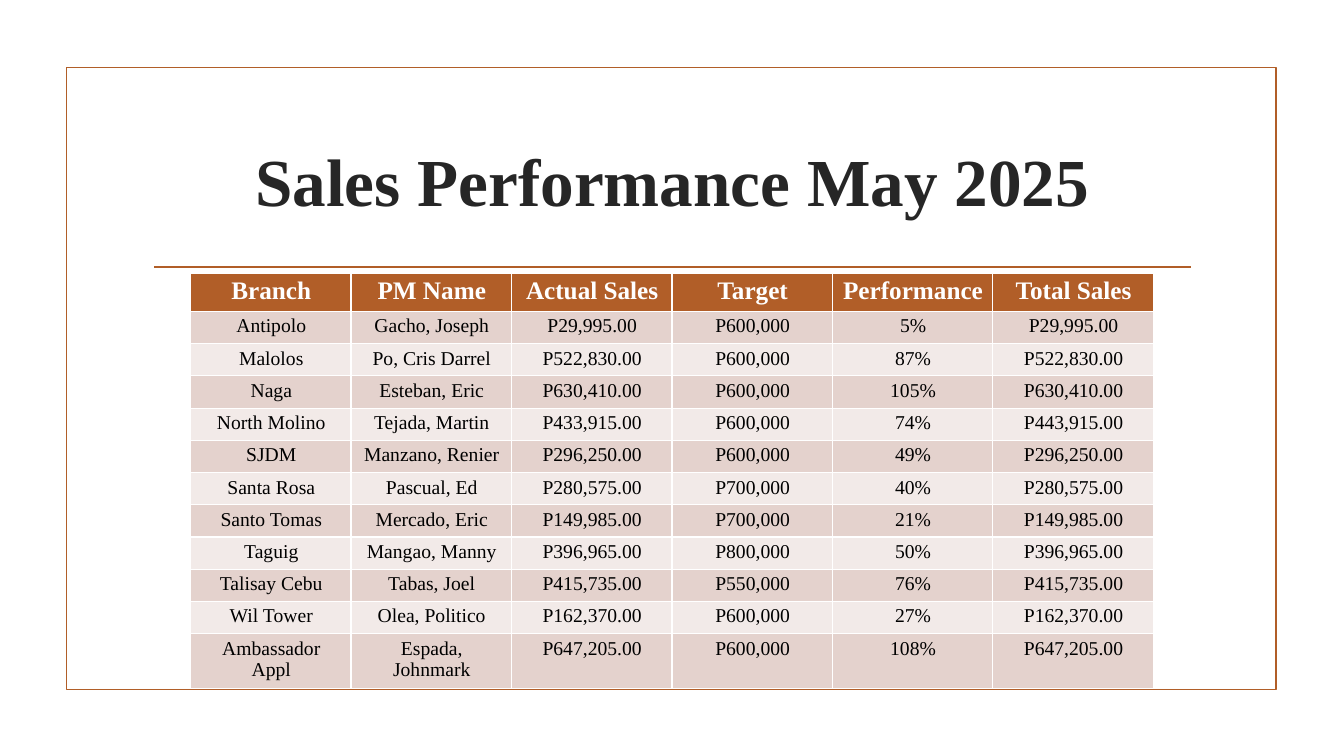
"""Build the May 2025 sales performance slide with its branch table."""
from lxml import etree
from pptx import Presentation
from pptx.dml.color import RGBColor
from pptx.enum.shapes import MSO_CONNECTOR, MSO_SHAPE
from pptx.enum.text import MSO_ANCHOR, PP_ALIGN
from pptx.oxml.ns import qn
from pptx.util import Inches, Pt

RUST = RGBColor(0xB1, 0x5E, 0x28)
CHARCOAL = RGBColor(0x26, 0x26, 0x26)
WHITE = RGBColor(0xFF, 0xFF, 0xFF)
BLACK = RGBColor(0x00, 0x00, 0x00)
BAND_DARK = RGBColor(0xE4, 0xD2, 0xCD)
BAND_LIGHT = RGBColor(0xF2, 0xEA, 0xE8)
FONT = "Times New Roman"

SALES = [
    ("Branch", "PM Name", "Actual Sales", "Target", "Performance", "Total Sales"),
    ("Antipolo", "Gacho, Joseph", "P29,995.00", "P600,000", "5%", "P29,995.00"),
    ("Malolos", "Po, Cris Darrel", "P522,830.00", "P600,000", "87%", "P522,830.00"),
    ("Naga", "Esteban, Eric", "P630,410.00", "P600,000", "105%", "P630,410.00"),
    ("North Molino", "Tejada, Martin", "P433,915.00", "P600,000", "74%", "P443,915.00"),
    ("SJDM", "Manzano, Renier", "P296,250.00", "P600,000", "49%", "P296,250.00"),
    ("Santa Rosa", "Pascual, Ed", "P280,575.00", "P700,000", "40%", "P280,575.00"),
    ("Santo Tomas", "Mercado, Eric", "P149,985.00", "P700,000", "21%", "P149,985.00"),
    ("Taguig", "Mangao, Manny", "P396,965.00", "P800,000", "50%", "P396,965.00"),
    ("Talisay Cebu", "Tabas, Joel", "P415,735.00", "P550,000", "76%", "P415,735.00"),
    ("Wil Tower", "Olea, Politico", "P162,370.00", "P600,000", "27%", "P162,370.00"),
    ("Ambassador Appl", "Espada, Johnmark", "P647,205.00", "P600,000", "108%", "P647,205.00"),
]


def write_centred(text_frame, text, size, color, bold):
    paragraph = text_frame.paragraphs[0]
    paragraph.alignment = PP_ALIGN.CENTER
    run = paragraph.add_run()
    run.text = text
    run.font.name = FONT
    run.font.size = Pt(size)
    run.font.bold = bold
    run.font.color.rgb = color


prs = Presentation()
prs.slide_width = Inches(13.33)
prs.slide_height = Inches(7.5)
slide = prs.slides.add_slide(prs.slide_layouts[6])
shapes = slide.shapes

frame = shapes.add_shape(
    MSO_SHAPE.RECTANGLE, Inches(0.66), Inches(0.67), Inches(12), Inches(6.17))
frame.shadow.inherit = False
frame.fill.background()
frame.line.color.rgb = RUST
frame.line.width = Pt(1.25)

title_rule = shapes.add_connector(
    MSO_CONNECTOR.STRAIGHT, Inches(1.53), Inches(2.65), Inches(11.81), Inches(2.65))
title_rule.line.color.rgb = RUST
title_rule.line.width = Pt(1.25)
etree.SubElement(title_rule._element.spPr, qn("a:effectLst"))

title = shapes.add_textbox(Inches(1.42), Inches(1.32), Inches(10.5), Inches(0.93))
title.text_frame.word_wrap = True
title.text_frame.vertical_anchor = MSO_ANCHOR.MIDDLE
write_centred(title.text_frame, "Sales Performance May 2025", 48, CHARCOAL, True)

sales_table = shapes.add_table(
    len(SALES), len(SALES[0]),
    Inches(1.89), Inches(2.71), Inches(9.55), Inches(0.32 * len(SALES))).table

for row, record in enumerate(SALES):
    if row == 0:
        fill, size, color = RUST, 18, WHITE
    else:
        fill, size, color = (BAND_DARK if row % 2 else BAND_LIGHT), 14, BLACK
    for column, value in enumerate(record):
        cell = sales_table.cell(row, column)
        cell.fill.solid()
        cell.fill.fore_color.rgb = fill
        cell.margin_left = Inches(0.1)
        cell.margin_right = Inches(0.09)
        cell.margin_top = cell.margin_bottom = Inches(0.04)
        write_centred(cell.text_frame, value, size, color, row == 0)

prs.save("out.pptx")
